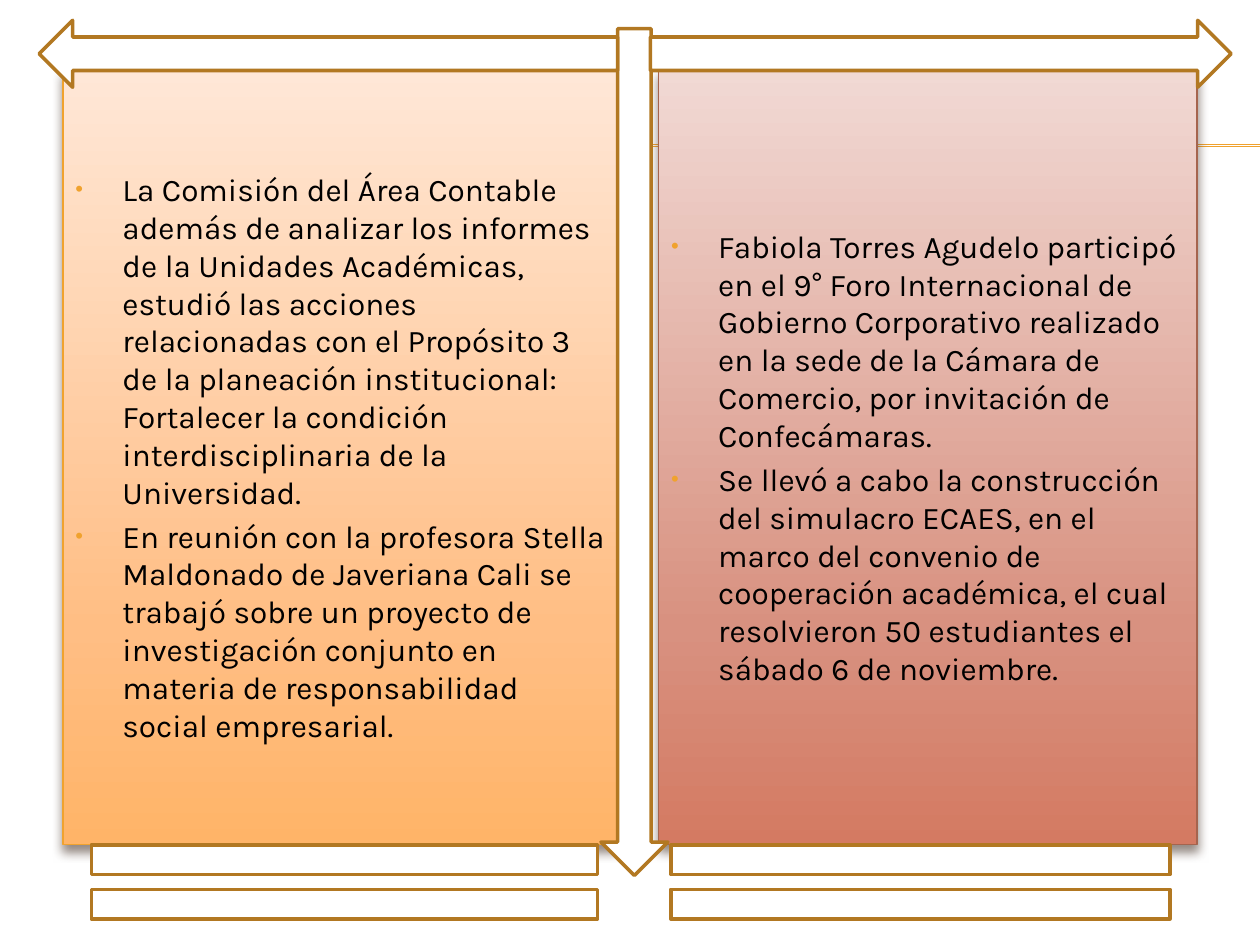
from dataclasses import dataclass

from lxml import etree
from pptx import Presentation
from pptx import util as u
from pptx.dml.color import RGBColor
from pptx.enum import shapes, text
from pptx.oxml import parse_xml
from pptx.oxml.ns import nsdecls, qn


@dataclass(frozen=True)
class Theme:
    font: str = "Karla"
    body: int = 18
    ink: str = "000000"
    accent: str = "F0A22E"
    outline: str = "B27822"
    paper: str = "FFFFFF"
    shadow: str = "4E3B30"
    brick: str = "A5644E"
    orange_fade: tuple = ("FFE7D7", "FFBE84", "FFB468")
    brick_fade: tuple = ("F1D9D4", "D89180", "D47A62")


THEME = Theme()
SHAPE = shapes.MSO_SHAPE

LEFT_ITEMS = [
    "La Comisión del Área Contable además de analizar los informes de la "
    "Unidades Académicas, estudió las acciones relacionadas con el Propósito 3 "
    "de la planeación institucional: Fortalecer la condición "
    "interdisciplinaria de la Universidad.",
    "En reunión con la profesora Stella Maldonado de Javeriana Cali se trabajó "
    "sobre un proyecto de investigación conjunto en materia de "
    "responsabilidad social empresarial.",
]
RIGHT_ITEMS = [
    "Fabiola Torres Agudelo participó en el 9° Foro Internacional de Gobierno "
    "Corporativo realizado en la sede de la Cámara de Comercio, por invitación "
    "de Confecámaras.",
    "Se llevó a cabo la construcción del simulacro ECAES, en el marco del "
    "convenio de cooperación académica, el cual resolvieron 50 estudiantes el "
    "sábado 6 de noviembre.",
]


def add_block(slide, kind, box, line, width):
    sp = slide.shapes.add_shape(kind, *(u.Cm(n) for n in box))
    sp.shadow.inherit = False
    sp.line.color.rgb = RGBColor.from_string(line)
    sp.line.width = u.Pt(width)
    return sp


def add_bullet(p):
    pPr = p._p.get_or_add_pPr()
    indent = u.Cm(0.95)
    pPr.set("marL", str(indent))
    pPr.set("indent", str(-indent))
    for xml in (
        f'<a:buClr {nsdecls("a")}><a:srgbClr val="{THEME.accent}"/></a:buClr>',
        f'<a:buSzPct {nsdecls("a")} val="70000"/>',
        f'<a:buFont {nsdecls("a")} typeface="Arial"/>',
        f'<a:buChar {nsdecls("a")} char="•"/>',
    ):
        pPr.append(parse_xml(xml))


def write(p, words, size=THEME.body, color=THEME.ink, before=0, bullet=False):
    p.alignment = text.PP_ALIGN.LEFT
    if before:
        p.space_before = u.Pt(before)
    if bullet:
        add_bullet(p)
    r = p.add_run()
    r.text = words
    r.font.name = THEME.font
    r.font.size = u.Pt(size)
    r.font.color.rgb = RGBColor.from_string(color)


def fade(sp, colors):
    sp.fill.gradient()
    sp.fill.gradient_angle = 270
    stops = sp._element.spPr.find(qn("a:gradFill")).find(qn("a:gsLst"))
    for old in list(stops):
        stops.remove(old)
    for pos, color in zip((0, 72, 100), colors):
        gs = etree.SubElement(stops, qn("a:gs"), pos=str(pos * 1000))
        etree.SubElement(gs, qn("a:srgbClr"), val=color)


def drop_shadow(sp):
    effects = sp._element.spPr.find(qn("a:effectLst"))
    shadow = etree.SubElement(
        effects, qn("a:outerShdw"), blurRad=str(u.Pt(6)), dist=str(u.Pt(4)),
        dir="5400000", algn="ctr", rotWithShape="0")
    color = etree.SubElement(shadow, qn("a:srgbClr"), val=THEME.shadow)
    etree.SubElement(color, qn("a:alpha"), val="60000")


def add_panel(slide, box, items, colors, line):
    sp = add_block(slide, SHAPE.RECTANGLE, box, line, 0.79)
    fade(sp, colors)
    drop_shadow(sp)
    tf = sp.text_frame
    tf.word_wrap = True
    tf.vertical_anchor = text.MSO_ANCHOR.MIDDLE
    for i, item in enumerate(items):
        p = tf.add_paragraph() if i else tf.paragraphs[0]
        write(p, item, before=3.6 if i else 0, bullet=True)


def add_rules(slide, x, y, width):
    for top in (y, y + 0.03):
        cn = slide.shapes.add_connector(
            shapes.MSO_CONNECTOR.STRAIGHT,
            u.Cm(x), u.Cm(top), u.Cm(x + width), u.Cm(top))
        cn.line.color.rgb = RGBColor.from_string(THEME.accent)
        cn.line.width = u.Pt(0.75)
        etree.SubElement(cn._element.spPr, qn("a:effectLst"))


def add_frame(slide, x, y, width, height):
    thick, center, base = 1.35, x + 12, y + 16.1
    for kind, box in (
        (SHAPE.DOWN_ARROW, (center - thick / 2, y + 0.17, thick, 17.07)),
        (SHAPE.RIGHT_ARROW, (x + 12.32, y, width - 12.32, thick)),
        (SHAPE.LEFT_ARROW, (x, y, 11.66, thick)),
        (SHAPE.MATH_EQUAL, (x - 0.79, base, 13.89, height - 16.1)),
        (SHAPE.MATH_EQUAL, (x + 10.92, base, 13.69, height - 16.1)),
    ):
        sp = add_block(slide, kind, box, THEME.outline, 2)
        sp.fill.solid()
        sp.fill.fore_color.rgb = RGBColor.from_string(THEME.paper)


def main():
    prs = Presentation()
    prs.slide_width, prs.slide_height = u.Cm(25.4), u.Cm(19.05)
    slide = prs.slides.add_slide(prs.slide_layouts[6])
    add_rules(slide, 1.42, 2.92, 23.98)
    add_panel(slide, (1.27, 1.4, 11.23, 15.62), LEFT_ITEMS,
              THEME.orange_fade, THEME.accent)
    add_panel(slide, (13.28, 1.4, 10.85, 15.62), RIGHT_ITEMS,
              THEME.brick_fade, THEME.brick)
    add_frame(slide, 0.79, 0.41, 24.03, 18.64)
    prs.save("out.pptx")


if __name__ == "__main__":
    main()
